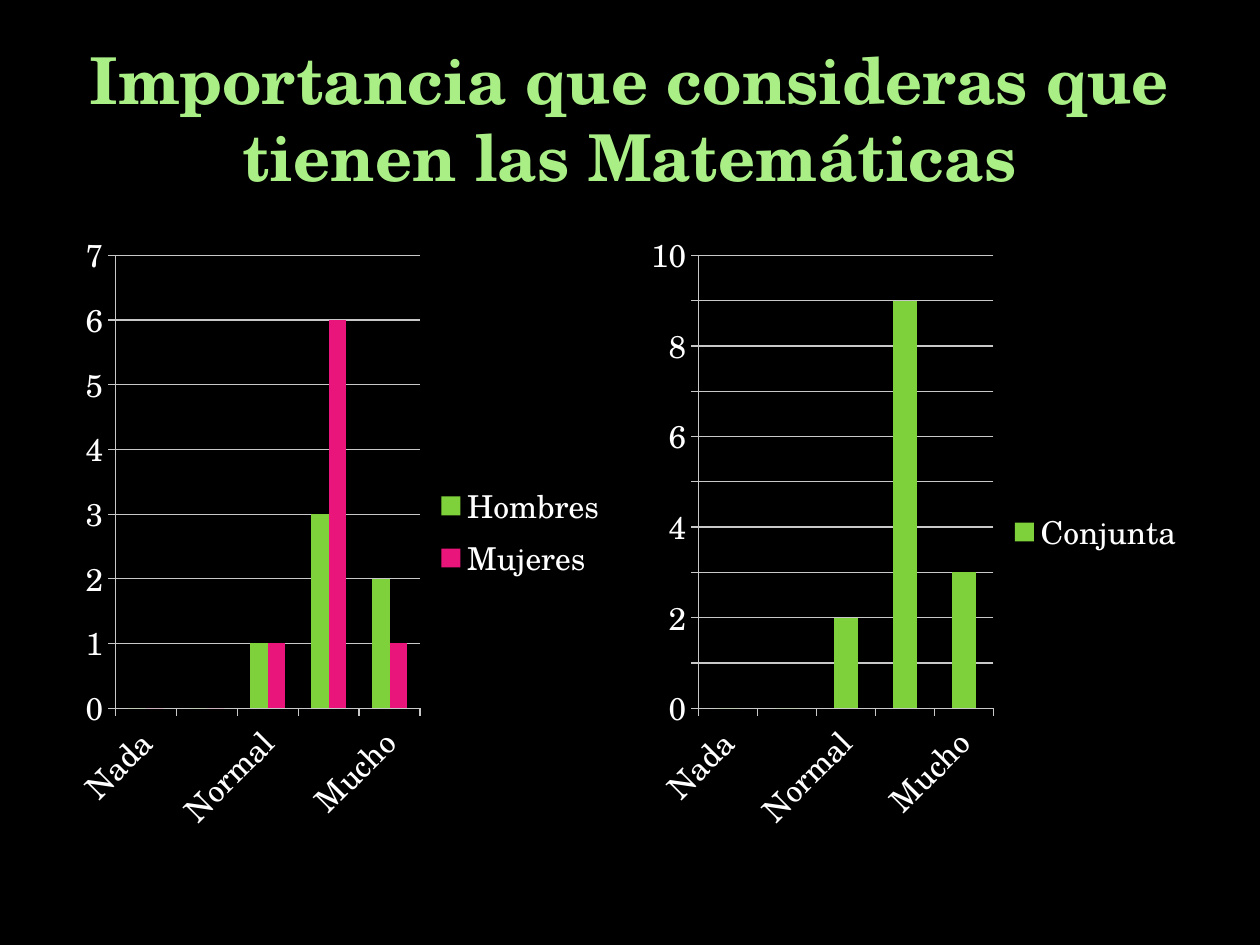
from pptx import Presentation
from pptx.chart.data import CategoryChartData
from pptx.dml.color import RGBColor
from pptx.enum.chart import XL_CHART_TYPE, XL_LEGEND_POSITION, XL_TICK_MARK
from pptx.enum.text import MSO_ANCHOR, MSO_AUTO_SIZE, PP_ALIGN
from pptx.util import Emu, Pt

FACE = "TeX Gyre Schola"
LEVELS = ["Nada", "Poco", "Normal", "Bastante", "Mucho"]
GREEN, PINK, WHITE, GREY = "7FD13B", "EA157A", "FFFFFF", "C8C8C8"


def px(n):
    """Turn pixels into EMU."""
    return Emu(n * 914400 // 126)


def tint(part, code):
    """Give a font or a fill a solid colour."""
    fill = getattr(part, "fill", part)
    fill.solid()
    fill.fore_color.rgb = RGBColor.from_string(code)


def apply(part, values):
    """Set each attribute named in values."""
    for name, value in values.items():
        setattr(part, name, value)


def add_title(slide, box, text):
    """Place and format the title."""
    title = slide.shapes.title
    apply(title, dict(zip(("left", "top", "width", "height"), map(px, box))))
    frame = title.text_frame
    frame.text = text
    apply(frame, {"word_wrap": True, "auto_size": MSO_AUTO_SIZE.NONE,
                  "vertical_anchor": MSO_ANCHOR.MIDDLE})
    line = frame.paragraphs[0]
    line.alignment = PP_ALIGN.CENTER
    font = line.runs[0].font
    apply(font, {"name": FACE, "size": Pt(36.9), "bold": True})
    tint(font, "A9EF86")


def add_columns(slide, box, series, top):
    """Place a column chart whose value axis ends at top."""
    data = CategoryChartData()
    data.categories = LEVELS
    for name, values, _ in series:
        data.add_series(name, values)
    chart = slide.shapes.add_chart(
        XL_CHART_TYPE.COLUMN_CLUSTERED, *map(px, box), data).chart
    apply(chart, {"has_title": False, "has_legend": True})
    apply(chart.font, {"name": FACE, "size": Pt(18)})
    tint(chart.font, WHITE)
    apply(chart.legend, {"position": XL_LEGEND_POSITION.RIGHT,
                         "include_in_layout": False})
    plot = chart.plots[0]
    apply(plot, {"gap_width": 150, "overlap": 0, "vary_by_categories": False})
    for item, (_, _, code) in zip(plot.series, series):
        tint(item.format, code)
    scale = chart.value_axis
    apply(scale, {"minimum_scale": 0, "maximum_scale": top, "major_unit": 1,
                  "has_major_gridlines": True})
    for axis in (scale, chart.category_axis):
        axis.major_tick_mark = XL_TICK_MARK.OUTSIDE
    for part in (scale, chart.category_axis, scale.major_gridlines):
        tint(part.format.line, GREY)
        part.format.line.width = Pt(0.75)


def main():
    """Build and save the slide."""
    deck = Presentation()
    apply(deck, {"slide_width": px(1260), "slide_height": px(945)})
    slide = deck.slides.add_slide(deck.slide_layouts[5])
    tint(slide.background, "000000")
    add_title(slide, (63, 38, 1134, 158),
              "Importancia que consideras que tienen las Matemáticas")
    add_columns(slide, (63, 220, 557, 624),
                [("Hombres", (0, 0, 1, 3, 2), GREEN),
                 ("Mujeres", (0, 0, 1, 6, 1), PINK)], 7)
    add_columns(slide, (640, 220, 557, 624),
                [("Conjunta", (0, 0, 2, 9, 3), GREEN)], 10)
    deck.save("out.pptx")


if __name__ == "__main__":
    main()
